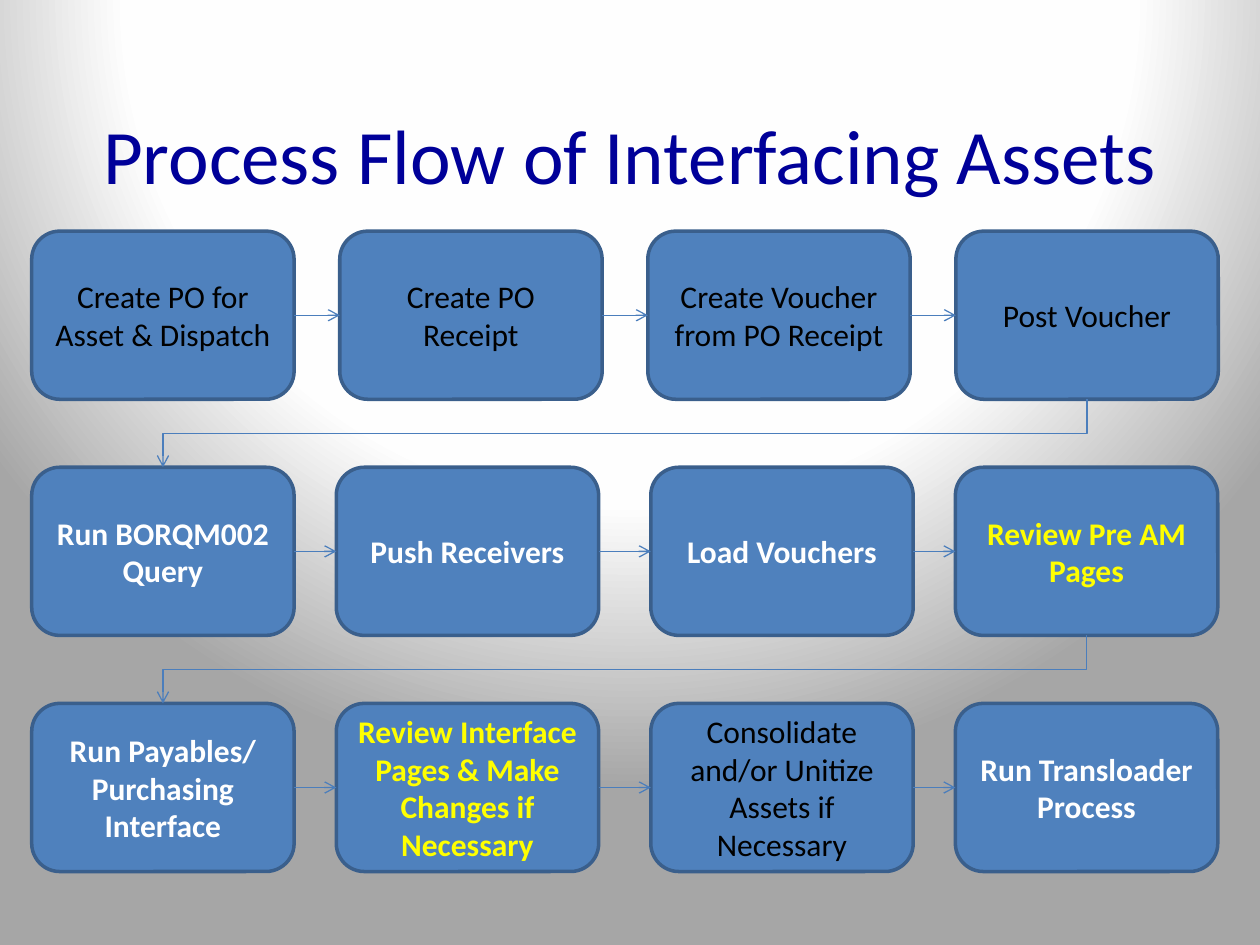
from dataclasses import dataclass
from itertools import pairwise

from lxml import etree
from pptx import Presentation
from pptx.dml.color import RGBColor
from pptx.enum.shapes import MSO_CONNECTOR, MSO_SHAPE
from pptx.enum.text import MSO_ANCHOR, PP_ALIGN
from pptx.oxml import parse_xml
from pptx.oxml.ns import nsdecls, qn
from pptx.util import Cm, Pt

ROUND_RECT = MSO_SHAPE.ROUNDED_RECTANGLE
STRAIGHT = MSO_CONNECTOR.STRAIGHT
ELBOW = MSO_CONNECTOR.ELBOW
CENTER = PP_ALIGN.CENTER
MIDDLE = MSO_ANCHOR.MIDDLE
LEFT_SIDE, RIGHT_SIDE = 1, 3


@dataclass(frozen=True)
class Theme:
    font: str = "Calibri"
    title_size: float = 44
    step_size: float = 18
    title: str = "000099"
    fill: str = "4F81BD"
    border: str = "3A5F8C"
    border_width: float = 2
    arrow: str = "4B7EBC"
    arrow_width: float = 0.75
    manual: str = "000000"
    process: str = "FFFFFF"
    review: str = "FFFF00"
    backdrop: tuple = ((0, "FFFFFF"), (64, "FEFEFE"), (100, "A6A6A6"))


THEME = Theme()
BOX_W, BOX_H = Cm(5.29), Cm(3.39)
FLOW_LEFT, FLOW_TOP, ROW_PITCH = Cm(0.64), Cm(4.66), Cm(4.76)
EVEN_OFFSETS = [Cm(6.21 * i) for i in range(4)]
SHIFTED_OFFSETS = [Cm(x) for x in (0, 6.14, 12.48, 18.62)]

ROWS = [
    (EVEN_OFFSETS, [
        ("Create PO for Asset & Dispatch", THEME.manual),
        ("Create PO Receipt", THEME.manual),
        ("Create Voucher from PO Receipt", THEME.manual),
        ("Post Voucher", THEME.manual),
    ]),
    (SHIFTED_OFFSETS, [
        ("Run BORQM002 Query", THEME.process),
        ("Push Receivers", THEME.process),
        ("Load Vouchers", THEME.process),
        ("Review Pre AM Pages", THEME.review),
    ]),
    (SHIFTED_OFFSETS, [
        ("Run Payables/ Purchasing Interface", THEME.process),
        ("Review Interface Pages & Make Changes if Necessary", THEME.review),
        ("Consolidate and/or Unitize Assets if Necessary", THEME.manual),
        ("Run Transloader Process", THEME.process),
    ]),
]


def rgb(value):
    return RGBColor.from_string(value)


def write_text(tf, text, *, size, color, bold=False):
    tf.word_wrap = True
    tf.vertical_anchor = MIDDLE
    p = tf.paragraphs[0]
    p.alignment = CENTER
    r = p.add_run()
    r.text = text
    r.font.name = THEME.font
    r.font.size = Pt(size)
    r.font.bold = bold
    r.font.color.rgb = rgb(color)


def set_backdrop(slide):
    stops = "".join(
        f'<a:gs pos="{pos * 1000}"><a:srgbClr val="{color}"/></a:gs>'
        for pos, color in THEME.backdrop
    )
    bg = parse_xml(
        f'<p:bg {nsdecls("p", "a")}><p:bgPr><a:gradFill rotWithShape="1">'
        f'<a:gsLst>{stops}</a:gsLst><a:path path="circle">'
        '<a:fillToRect l="50000" t="-80000" r="50000" b="180000"/></a:path>'
        '</a:gradFill><a:effectLst/></p:bgPr></p:bg>'
    )
    slide.element.cSld.insert(0, bg)


def add_title(slide, left, top, width, height):
    sp = slide.shapes.title
    sp.left, sp.top, sp.width, sp.height = left, top, width, height
    write_text(sp.text_frame, "Process Flow of Interfacing Assets",
               size=THEME.title_size, color=THEME.title)


def add_step(slide, left, top, text, color):
    sp = slide.shapes.add_shape(ROUND_RECT, left, top, BOX_W, BOX_H)
    sp.shadow.inherit = False
    sp.fill.solid()
    sp.fill.fore_color.rgb = rgb(THEME.fill)
    sp.line.color.rgb = rgb(THEME.border)
    sp.line.width = Pt(THEME.border_width)
    write_text(sp.text_frame, text, size=THEME.step_size, color=color,
               bold=color != THEME.manual)
    return sp


def add_arrow(slide, kind, x1, y1, x2, y2):
    cxn = slide.shapes.add_connector(kind, x1, y1, x2, y2)
    cxn.line.color.rgb = rgb(THEME.arrow)
    cxn.line.width = Pt(THEME.arrow_width)
    etree.SubElement(cxn.line._get_or_add_ln(), qn("a:tailEnd"), type="arrow")
    etree.SubElement(cxn._element.spPr, qn("a:effectLst"))
    return cxn


def add_row(slide, left, top, offsets, steps):
    boxes = [add_step(slide, left + dx, top, text, color)
             for dx, (text, color) in zip(offsets, steps)]
    mid = top + BOX_H // 2
    for a, b in pairwise(boxes):
        cxn = add_arrow(slide, STRAIGHT, a.left + a.width, mid, b.left, mid)
        cxn.begin_connect(a, RIGHT_SIDE)
        cxn.end_connect(b, LEFT_SIDE)
    return boxes


def link_rows(slide, last, first):
    x1, y1 = last.left + last.width // 2, last.top + last.height
    x2, y2 = first.left + first.width // 2, first.top
    drop, span = y2 - y1, x1 - x2
    left = (x1 + x2 - drop) // 2
    top = (y1 + y2 - span) // 2
    cxn = add_arrow(slide, ELBOW, left, top, left + drop, top + span)
    cxn._element.spPr.find(qn("a:xfrm")).set("rot", "5400000")


def add_flow(slide, left, top):
    rows = [add_row(slide, left, top + i * ROW_PITCH, offsets, steps)
            for i, (offsets, steps) in enumerate(ROWS)]
    for upper, lower in pairwise(rows):
        link_rows(slide, upper[-1], lower[0])


def main():
    prs = Presentation()
    prs.slide_width, prs.slide_height = Cm(25.4), Cm(19.05)
    slide = prs.slides.add_slide(prs.slide_layouts[5])
    set_backdrop(slide)
    add_title(slide, Cm(1.27), Cm(1.93), Cm(22.86), Cm(2.34))
    add_flow(slide, FLOW_LEFT, FLOW_TOP)
    prs.save("out.pptx")


if __name__ == "__main__":
    main()
